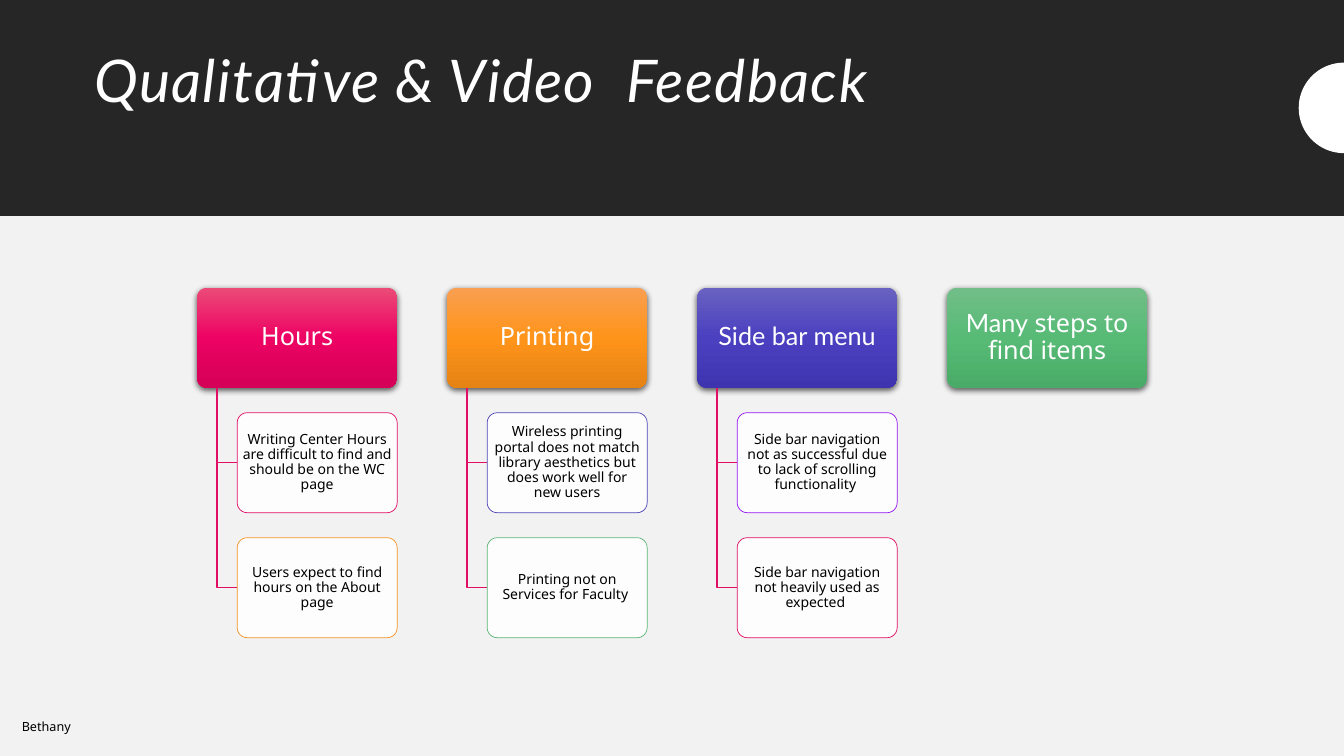
import copy
import math

import lxml.etree
import pptx
import pptx.dml.color
import pptx.enum.shapes
import pptx.enum.text
import pptx.oxml.ns
import pptx.util

Cm, Pt = pptx.util.Cm, pptx.util.Pt
qn = pptx.oxml.ns.qn
SHAPE = pptx.enum.shapes.MSO_SHAPE
ANCHOR = pptx.enum.text.MSO_ANCHOR
ALIGN = pptx.enum.text.PP_ALIGN
FIT = pptx.enum.text.MSO_AUTO_SIZE

SLIDE_W, SLIDE_H = 33.87, 19.05
DARK, LIGHT, WHITE, BLACK, PINK = "262626", "F2F2F2", "FFFFFF", "000000", "E20E65"

# Each column: heading runs, gradient stops, cards with their outline colours
COLUMNS = [
    ([("Hours", "Noto Sans")], ["EB4B78", "ED0363", "D50058"],
     [("Writing Center Hours are difficult to find and should be on the WC page", PINK),
      ("Users expect to find hours on the About page", "F59324")]),
    ([("Printing", "Noto Sans")], ["F99F51", "FF941A", "E58315"],
     [("Wireless printing portal does not match library aesthetics "
       "but does work well for new users", "5046B9"),
      ("Printing not on Services for Faculty ", "5CB678")]),
    ([("Side bar menu", "Lato")], ["6962C1", "4B40BF", "3F34AF"],
     [("Side bar navigation not as successful due to lack of scrolling functionality ", "9717F7"),
      ("Side bar navigation not heavily used as expected ", PINK)]),
    ([("Many", "Lato"), (" steps to find items", "Noto Sans")],
     ["72BE88", "57BB76", "49AB67"], []),
]


def rgb(value):
    return pptx.dml.color.RGBColor.from_string(value)


def apply(obj, formats):
    for name, value in formats.items():
        setattr(obj, name, value)


def write(tf, runs, size, color, frame, para, font=None):
    apply(tf, frame)
    p = tf.paragraphs[0]
    apply(p, para)
    for text, face in runs:
        r = p.add_run()
        r.text = text
        apply(r.font, {"name": face, "size": Pt(size), **(font or {})})
        r.font.color.rgb = rgb(color)
    return p


def add_box(s, kind, x, y, w, h, color=None):
    sp = s.shapes.add_shape(kind, Cm(x), Cm(y), Cm(w), Cm(h))
    sp.shadow.inherit = False
    sp.line.fill.background()
    if color:
        sp.fill.solid()
        sp.fill.fore_color.rgb = rgb(color)
    return sp


def add_rounded(s, x, y, w, h, runs, size, color, inset):
    sp = add_box(s, SHAPE.ROUNDED_RECTANGLE, x, y, w, h, WHITE)
    sp.adjustments[0] = 0.1
    frame = {"word_wrap": True, "vertical_anchor": ANCHOR.MIDDLE,
             "margin_left": Cm(inset), "margin_right": Cm(inset),
             "margin_top": Cm(inset / 2), "margin_bottom": Cm(inset / 2)}
    write(sp.text_frame, runs, size, color, frame,
          {"alignment": ALIGN.CENTER, "line_spacing": 0.9})
    return sp


def add_heading(s, x, y, w, h, runs, stops):
    sp = add_rounded(s, x, y, w, h, runs, 18, WHITE, 0.1)
    # Three-stop vertical gradient
    sp.fill.gradient()
    sp.fill.gradient_angle = 270
    gs_list = sp._element.spPr.find(".//" + qn("a:gsLst"))
    gs_list.append(copy.deepcopy(gs_list[0]))
    for i, (stop, color) in enumerate(zip(sp.fill.gradient_stops, stops)):
        stop.position = i / 2
        stop.color.rgb = rgb(color)
    # Soft shadow below
    shadow = lxml.etree.SubElement(
        sp._element.spPr.find(qn("a:effectLst")), qn("a:outerShdw"),
        blurRad=str(Pt(4.5)), dist=str(Pt(1.5)), dir="5400000", rotWithShape="0")
    clr = lxml.etree.SubElement(shadow, qn("a:srgbClr"), val=BLACK)
    lxml.etree.SubElement(clr, qn("a:alpha"), val="63000")


def add_card(s, x, y, w, h, text, outline):
    sp = add_rounded(s, x, y, w, h, [(text, "Noto Sans")], 10, BLACK, 0.05)
    fill_clr = sp._element.spPr.find(qn("a:solidFill"))[0]
    lxml.etree.SubElement(fill_clr, qn("a:alpha"), val="90000")
    sp.line.color.rgb = rgb(outline)
    sp.line.width = Pt(0.5)


def add_outline(s, points, closed):
    pts = [(Cm(x), Cm(y)) for x, y in points]
    builder = s.shapes.build_freeform(*pts[0])
    builder.add_line_segments(pts[1:], close=closed)
    sp = builder.convert_to_shape()
    sp.shadow.inherit = False
    return sp


def add_branch(s, x, y, x2, y2):
    sp = add_outline(s, [(x, y), (x, y2), (x2, y2)], False)
    sp.fill.background()
    sp.line.color.rgb = rgb(PINK)
    sp.line.width = Pt(1)


def add_header(s, x, y, w, h):
    # Dark band with the title over it
    add_box(s, SHAPE.RECTANGLE, x, y, w, h, DARK)
    title = s.shapes.title
    s.shapes._spTree.append(title._element)
    apply(title, {"left": Cm(x + 2.12), "top": Cm(y + 1.17),
                  "width": Cm(w - 4.23), "height": Cm(3.68)})
    p = write(title.text_frame, [("Qualitative & Video  Feedback", "Lato")], 42, WHITE,
              {"word_wrap": True, "auto_size": FIT.NONE, "vertical_anchor": ANCHOR.TOP},
              {"alignment": ALIGN.LEFT, "line_spacing": 0.9}, {"italic": True})
    p.runs[0].font._element.set("spc", "100")
    # Half disc on the right edge
    radius, steps = 1.14, 48
    angles = [math.pi * (0.5 + i / steps) for i in range(steps + 1)]
    disc = add_outline(s, [(x + w + radius * math.cos(a), y + h / 2 - radius * math.sin(a))
                           for a in angles], True)
    disc.fill.solid()
    disc.fill.fore_color.rgb = rgb(WHITE)
    disc.line.fill.background()


def add_column(s, x, y, w, h, runs, stops, cards):
    add_heading(s, x, y, w, h, runs, stops)
    for i, (text, outline) in enumerate(cards, 1):
        top = y + 1.25 * h * i
        add_branch(s, x + 0.1 * w, y + h, x + 0.2 * w, top + h / 2)
        add_card(s, x + 0.2 * w, top, 0.8 * w, h, text, outline)


def add_hierarchy(s, x, y, w, h):
    # Gaps are a quarter of a box, both across and down
    box_w = w / (1.25 * len(COLUMNS) - 0.25)
    box_h = h / 3.5
    for i, column in enumerate(COLUMNS):
        add_column(s, x + 1.25 * box_w * i, y, box_w, box_h, *column)


def add_presenter(s, x, y, w, h):
    tb = s.shapes.add_textbox(Cm(x), Cm(y), Cm(w), Cm(h))
    write(tb.text_frame, [("Bethany", "Noto Sans")], 9, BLACK,
          {"word_wrap": False, "auto_size": FIT.SHAPE_TO_FIT_TEXT}, {"alignment": ALIGN.LEFT})


def main():
    prs = pptx.Presentation()
    prs.slide_width, prs.slide_height = Cm(SLIDE_W), Cm(SLIDE_H)
    s = prs.slides.add_slide(prs.slide_layouts[5])
    s.background.fill.solid()
    s.background.fill.fore_color.rgb = rgb(LIGHT)
    add_header(s, 0, 0, SLIDE_W, 5.44)
    add_hierarchy(s, 4.97, 7.25, 23.94, 8.82)
    add_presenter(s, 0.3, 18, 1.83, 0.64)
    prs.save("out.pptx")


if __name__ == "__main__":
    main()
